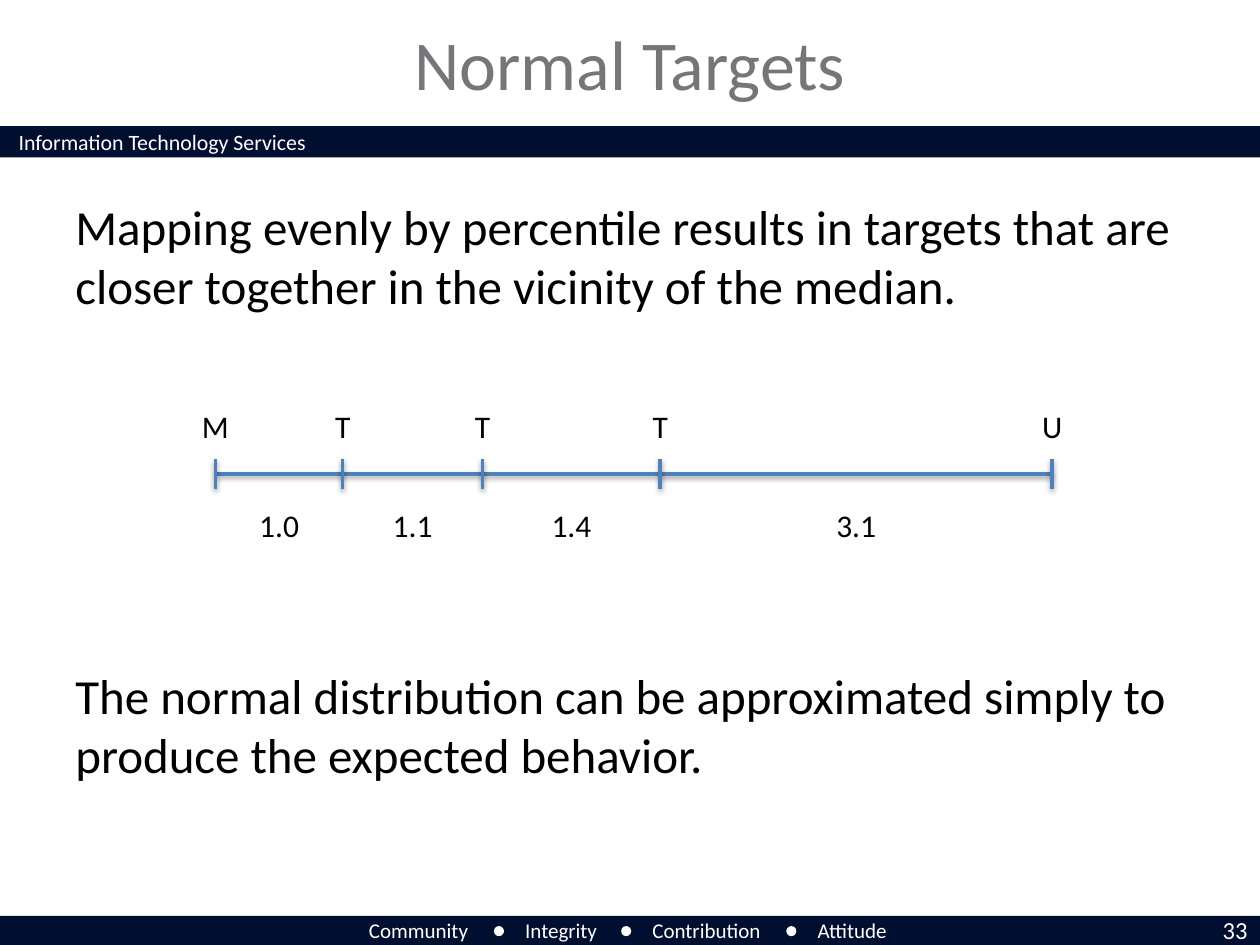
from itertools import accumulate

from lxml import etree
from pptx import Presentation
from pptx.dml.color import RGBColor
from pptx.enum.shapes import MSO_CONNECTOR, MSO_SHAPE
from pptx.enum.text import MSO_ANCHOR, PP_ALIGN
from pptx.oxml.ns import qn
from pptx.util import Inches, Pt

NAVY, WHITE, BLACK, GREY, BLUE = "000E2F", "FFFFFF", "000000", "747679", "4F81BD"

STATEMENTS = [
    "Mapping evenly by percentile results in targets that are "
    "closer together in the vicinity of the median.",
    "The normal distribution can be approximated simply to "
    "produce the expected behavior.",
]
VALUES = [("Community", 2.83, 1), ("Integrity", 4.07, 0.8),
          ("Contribution", 5.08, 1.1), ("Attitude", 6.39, 0.78)]
DOT_LEFTS = [3.92, 4.93, 6.24]

TARGETS = ["M", "T", "T", "T", "U"]
SPACINGS = [1.0, 1.1, 1.4, 3.1]
SCALE_LEFT, SCALE_Y = 1.71, 3.76
TICK_GAP, TICK_HALF = 0.01, 0.12
LABEL_WIDTH = 0.52


def rgb(color):
    return RGBColor.from_string(color)


def format_paragraph(paragraph, size, color, align=PP_ALIGN.LEFT):
    paragraph.alignment = align
    for name, value in {"name": "Calibri", "size": Pt(size)}.items():
        setattr(paragraph.font, name, value)
    paragraph.font.color.rgb = rgb(color)


def add_text(slide, lines, box, size, color, align=PP_ALIGN.LEFT,
             wrap=True, gap=0):
    """Add a text box with one paragraph per line, gap points apart."""
    frame = slide.shapes.add_textbox(*map(Inches, box)).text_frame
    frame.word_wrap = wrap
    for index, line in enumerate(lines):
        paragraph = frame.add_paragraph() if index else frame.paragraphs[0]
        paragraph.text = line
        format_paragraph(paragraph, size, color, align)
        if index:
            paragraph.space_before = Pt(gap)


def add_filled(slide, kind, box, color):
    shape = slide.shapes.add_shape(kind, *map(Inches, box))
    shape.shadow.inherit = False
    shape.fill.solid()
    shape.fill.fore_color.rgb = rgb(color)
    shape.line.fill.background()


def add_shadowed_line(slide, *ends):
    line = slide.shapes.add_connector(MSO_CONNECTOR.STRAIGHT, *map(Inches, ends))
    line.line.color.rgb = rgb(BLUE)
    line.line.width = Pt(2)
    effects = etree.SubElement(line._element.spPr, qn("a:effectLst"))
    shadow = etree.SubElement(
        effects, qn("a:outerShdw"), blurRad=str(Pt(3.1)), dist=str(Pt(1.6)),
        dir="5400000", rotWithShape="0")
    shade = etree.SubElement(shadow, qn("a:srgbClr"), val=BLACK)
    etree.SubElement(shade, qn("a:alpha"), val="38000")


def add_title(slide, text):
    title = slide.shapes.title
    place = {"left": 1, "top": 0.1, "width": 8, "height": 0.8}
    for name, value in place.items():
        setattr(title, name, Inches(value))
    title.text_frame.text = text
    title.text_frame.vertical_anchor = MSO_ANCHOR.MIDDLE
    format_paragraph(title.text_frame.paragraphs[0], 40, GREY, PP_ALIGN.CENTER)


def add_bands(slide):
    for top, height in [(1, 0.25), (7.27, 0.23)]:
        add_filled(slide, MSO_SHAPE.RECTANGLE, (0, top, 10, height), NAVY)
    add_text(slide, ["Information Technology Services"],
             (0.05, 0.97, 3.4, 0.32), 12.5, WHITE)
    for value, left, width in VALUES:
        add_text(slide, [value], (left, 7.23, width, 0.3), 12, WHITE, wrap=False)
    for left in DOT_LEFTS:
        add_filled(slide, MSO_SHAPE.OVAL, (left, 7.35, 0.08, 0.08), WHITE)
    add_text(slide, ["33"], (9.24, 7.21, 0.76, 0.34), 14, WHITE, PP_ALIGN.RIGHT)


def add_scale_label(slide, text, center, top):
    add_text(slide, [text], (center - LABEL_WIDTH / 2, top, LABEL_WIDTH, 0.4),
             18, BLACK, PP_ALIGN.CENTER, wrap=False)


def add_target_scale(slide):
    """Draw the targets on a line, one inch per unit of spacing."""
    ticks = list(accumulate((s + TICK_GAP for s in SPACINGS), initial=SCALE_LEFT))
    for start, end, spacing in zip(ticks, ticks[1:], SPACINGS):
        add_shadowed_line(slide, start, SCALE_Y, end, SCALE_Y)
        add_scale_label(slide, f"{spacing:.1f}", (start + end) / 2, 3.97)
    for tick, target in zip(ticks, TARGETS):
        add_shadowed_line(slide, tick, SCALE_Y - TICK_HALF, tick, SCALE_Y + TICK_HALF)
        add_scale_label(slide, target, tick, 3.18)


def main():
    deck = Presentation()
    deck.slide_width, deck.slide_height = Inches(10), Inches(7.5)
    slide = deck.slides.add_slide(deck.slide_layouts[5])
    add_bands(slide)
    add_title(slide, "Normal Targets")
    add_text(slide, STATEMENTS, (0.5, 1.51, 9, 5.5), 28, BLACK, gap=201)
    add_target_scale(slide)
    deck.save("out.pptx")


if __name__ == "__main__":
    main()
